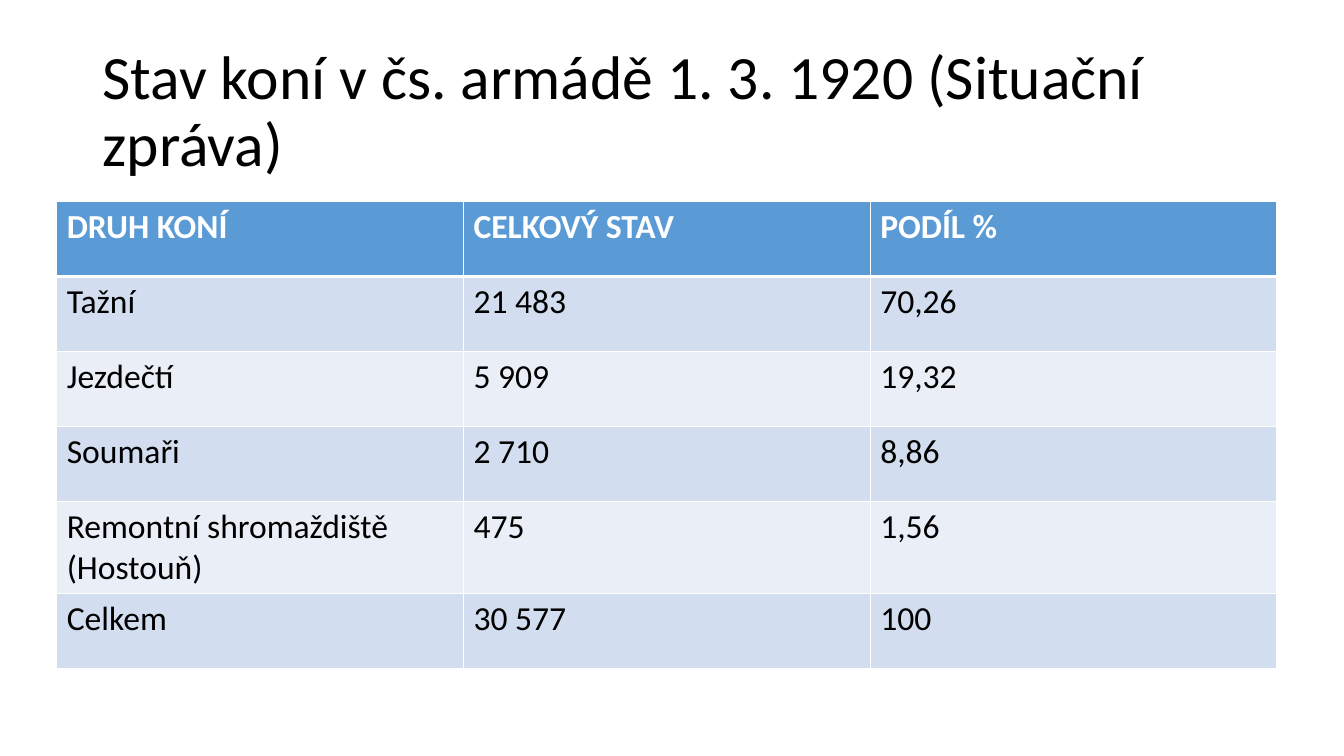
from dataclasses import dataclass

from lxml import etree
from pptx import Presentation
from pptx import util as u
from pptx.dml.color import RGBColor
from pptx.enum import text
from pptx.oxml import ns


@dataclass(frozen=True)
class Theme:
    font: str = "Calibri"
    title_size: int = 44
    table_size: int = 24
    ink: str = "000000"
    white: str = "FFFFFF"
    header: str = "5B9BD5"
    bands: tuple = ("D2DEEF", "EAEFF7")
    thin: int = 1
    thick: int = 3


THEME = Theme()

HEADING = "Stav koní v čs. armádě 1. 3. 1920 (Situační zpráva)"
HORSE_COUNTS = [
    ("DRUH KONÍ", "CELKOVÝ STAV", "PODÍL %"),
    ("Tažní", "21 483", "70,26"),
    ("Jezdečtí", "5 909", "19,32"),
    ("Soumaři", "2 710", "8,86"),
    ("Remontní shromaždiště (Hostouň)", "475", "1,56"),
    ("Celkem", "30 577", "100"),
]


def format_paragraph(paragraph, size, color, bold=False):
    font = paragraph.font
    font.name = THEME.font
    font.size = u.Pt(size)
    font.bold = bold
    font.color.rgb = RGBColor.from_string(color)


def add_title(slide):
    title = slide.shapes.title
    title.left, title.top = u.Cm(2.33), u.Cm(1.01)
    title.width, title.height = u.Cm(29.21), u.Cm(3.68)
    frame = title.text_frame
    frame.text = HEADING
    frame.word_wrap = True
    frame.auto_size = text.MSO_AUTO_SIZE.NONE
    frame.vertical_anchor = text.MSO_ANCHOR.MIDDLE
    heading = frame.paragraphs[0]
    heading.alignment = text.PP_ALIGN.LEFT
    heading.line_spacing = 0.9
    format_paragraph(heading, THEME.title_size, THEME.ink)


def set_borders(cell, top, bottom):
    properties = cell._tc.get_or_add_tcPr()
    widths = {"lnL": THEME.thin, "lnR": THEME.thin, "lnT": top, "lnB": bottom}
    for side, width in widths.items():
        border = etree.SubElement(properties, ns.qn(f"a:{side}"), w=str(u.Pt(width)))
        fill = etree.SubElement(border, ns.qn("a:solidFill"))
        etree.SubElement(fill, ns.qn("a:srgbClr"), val=THEME.white)


def format_cell(cell, row):
    is_header = row == 0
    set_borders(
        cell,
        top=THEME.thick if row == 1 else THEME.thin,
        bottom=THEME.thick if is_header else THEME.thin,
    )
    background = THEME.header if is_header else THEME.bands[(row - 1) % 2]
    cell.fill.solid()
    cell.fill.fore_color.rgb = RGBColor.from_string(background)
    color = THEME.white if is_header else THEME.ink
    format_paragraph(cell.text_frame.paragraphs[0], THEME.table_size, color, is_header)


def add_horse_table(slide):
    row_count, column_count = len(HORSE_COUNTS), len(HORSE_COUNTS[0])
    column_width, row_height = u.Cm(10.25), u.Cm(1.89)
    horses = slide.shapes.add_table(
        row_count, column_count, u.Cm(1.43), u.Cm(5.08),
        column_width * column_count, row_height * row_count,
    ).table
    for row, values in enumerate(HORSE_COUNTS):
        for column, value in enumerate(values):
            cell = horses.cell(row, column)
            cell.text = value
            format_cell(cell, row)


def main():
    deck = Presentation()
    deck.slide_width, deck.slide_height = u.Cm(33.87), u.Cm(19.05)
    slide = deck.slides.add_slide(deck.slide_layouts.get_by_name("Title Only"))
    add_title(slide)
    add_horse_table(slide)
    deck.save("out.pptx")


if __name__ == "__main__":
    main()
